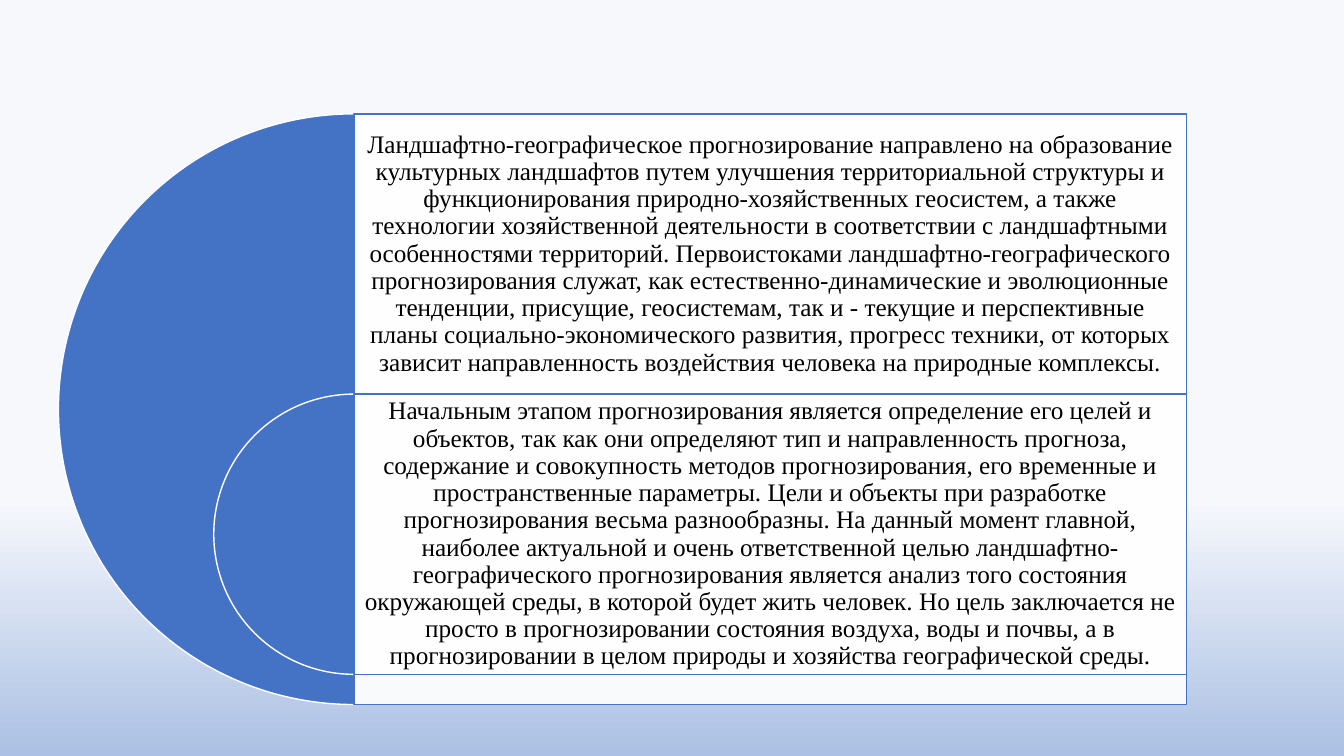
from dataclasses import dataclass

from lxml.etree import SubElement
from pptx import Presentation
from pptx.dml.color import RGBColor
from pptx.enum.shapes import MSO_SHAPE
from pptx.enum.text import MSO_ANCHOR, PP_ALIGN
from pptx.oxml.ns import qn
from pptx.util import Inches, Pt


@dataclass(frozen=True)
class Theme:
    blue: RGBColor = RGBColor.from_string("4472C4")
    white: RGBColor = RGBColor.from_string("FFFFFF")
    black: RGBColor = RGBColor.from_string("000000")
    sky_top: RGBColor = RGBColor.from_string("F6F8FC")
    sky_bottom: RGBColor = RGBColor.from_string("ABC0E4")
    font: str = "Times New Roman"
    body_size: Pt = Pt(18)
    outline: Pt = Pt(1)


THEME = Theme()

AXIS_LEFT = 3.51
PANEL_WIDTH = 8.26
TOP = 1.13
OUTER_DIAMETER = 5.86
SECTION_HEIGHT = 2.78
TEXT_INSET = 0.07

FORECASTING_AIM = (
    "Ландшафтно-географическое прогнозирование направлено на образование "
    "культурных ландшафтов путем улучшения территориальной структуры и "
    "функционирования природно-хозяйственных геосистем, а также технологии "
    "хозяйственной деятельности в соответствии с ландшафтными особенностями "
    "территорий. Первоистоками ландшафтно-географического прогнозирования "
    "служат, как естественно-динамические и эволюционные тенденции, присущие, "
    "геосистемам, так и - текущие и перспективные планы социально-экономического "
    "развития, прогресс техники, от которых зависит направленность воздействия "
    "человека на природные комплексы."
)
INITIAL_STAGE = (
    "Начальным этапом прогнозирования является определение его целей и объектов, "
    "так как они определяют тип и направленность прогноза, содержание и "
    "совокупность методов прогнозирования, его временные и пространственные "
    "параметры. Цели и объекты при разработке прогнозирования весьма "
    "разнообразны. На данный момент главной, наиболее актуальной и очень "
    "ответственной целью ландшафтно-географического прогнозирования является "
    "анализ того состояния окружающей среды, в которой будет жить человек. Но "
    "цель заключается не просто в прогнозировании состояния воздуха, воды и "
    "почвы, а в прогнозировании в целом природы и хозяйства географической среды."
)


def paint_background(slide):
    fill = slide.background.fill
    fill.gradient()
    fill.gradient_angle = 270
    stops = ((0.66, THEME.sky_top), (1.0, THEME.sky_bottom))
    for stop, (position, color) in zip(fill.gradient_stops, stops):
        stop.position = position
        stop.color.rgb = color


def add_flat_shape(slide, preset, box, fill_color, line_color):
    shape = slide.shapes.add_shape(preset, *map(Inches, box))
    shape.shadow.inherit = False
    shape.fill.solid()
    shape.fill.fore_color.rgb = fill_color
    shape.line.color.rgb = line_color
    shape.line.width = THEME.outline
    return shape


def add_half_disc(slide, top, diameter):
    """Draw the left half of a disc centred on the panels' left edge."""
    box = (AXIS_LEFT - diameter / 2, top, diameter, diameter)
    half_disc = add_flat_shape(slide, MSO_SHAPE.PIE, box, THEME.blue, THEME.white)
    # Angles of 90 and 270 degrees, in units of 100000/60000 degree
    half_disc.adjustments[0] = 54
    half_disc.adjustments[1] = 162


def add_panel(slide, top, height):
    """Draw a white panel at 90 % opacity."""
    box = (AXIS_LEFT, top, PANEL_WIDTH, height)
    panel = add_flat_shape(slide, MSO_SHAPE.RECTANGLE, box, THEME.white, THEME.blue)
    fill_color = panel.fill._xPr.find(qn("a:solidFill")).find(qn("a:srgbClr"))
    SubElement(fill_color, qn("a:alpha"), val="90000")


def add_section_text(slide, top, wording):
    box = (AXIS_LEFT, top, PANEL_WIDTH, SECTION_HEIGHT)
    frame = slide.shapes.add_textbox(*map(Inches, box)).text_frame
    inset = Inches(TEXT_INSET)
    frame_format = {
        "word_wrap": True,
        "vertical_anchor": MSO_ANCHOR.MIDDLE,
        "margin_left": inset,
        "margin_right": inset,
        "margin_top": inset,
        "margin_bottom": inset,
    }
    for name, value in frame_format.items():
        setattr(frame, name, value)

    paragraph = frame.paragraphs[0]
    paragraph.alignment = PP_ALIGN.CENTER
    paragraph.line_spacing = 0.9
    run = paragraph.add_run()
    run.text = wording
    for name, value in {"name": THEME.font, "size": THEME.body_size}.items():
        setattr(run.font, name, value)
    run.font.color.rgb = THEME.black


def main():
    presentation = Presentation()
    presentation.slide_width = Inches(13.33)
    presentation.slide_height = Inches(7.5)
    slide = presentation.slides.add_slide(presentation.slide_layouts[6])
    paint_background(slide)

    sections = (
        (OUTER_DIAMETER, FORECASTING_AIM),
        (SECTION_HEIGHT, INITIAL_STAGE),
    )
    for index, (diameter, wording) in enumerate(sections):
        top = TOP + index * SECTION_HEIGHT
        add_half_disc(slide, top, diameter)
        add_panel(slide, top, diameter)
        add_section_text(slide, top, wording)

    presentation.save("out.pptx")


if __name__ == "__main__":
    main()
